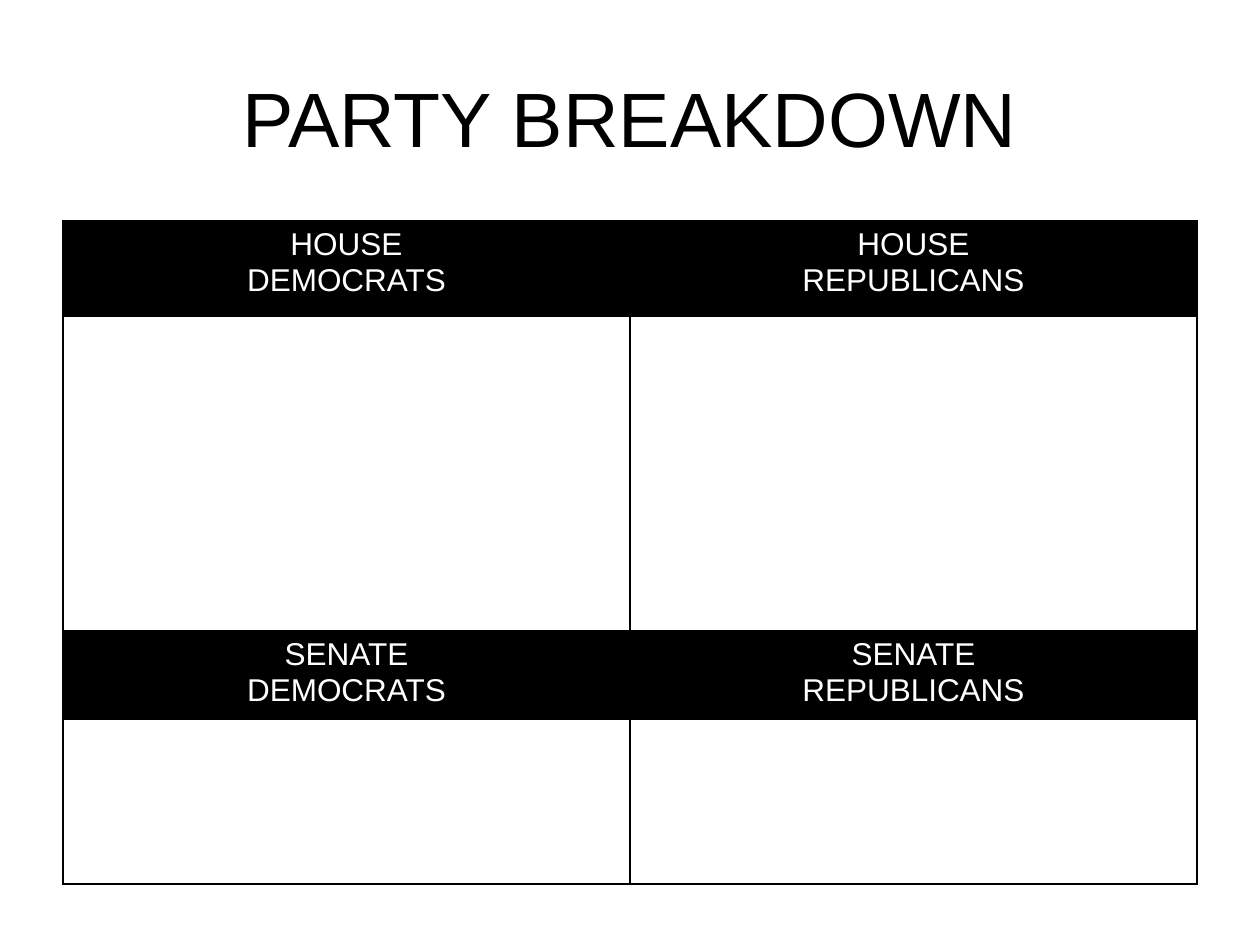
import lxml.etree
import pptx
import pptx.dml.color
import pptx.enum.text
import pptx.oxml.ns
import pptx.util

PX_PER_INCH = 126
FONT = "Arial"
COLORS = {"ink": "000000", "paper": "FFFFFF"}
ROW_HEIGHTS = [95, 315, 84, 165]
HEADINGS = {
    0: ["HOUSE\nDEMOCRATS", "HOUSE\nREPUBLICANS"],
    2: ["SENATE\nDEMOCRATS", "SENATE\nREPUBLICANS"],
}


def px(length):
    """Turn pixels into EMU."""
    return pptx.util.Emu(length * 914400 // PX_PER_INCH)


def color(name):
    """Look up a named colour."""
    return pptx.dml.color.RGBColor.from_string(COLORS[name])


def write_centred(text_frame, text, size, color_name):
    """Fill a text frame with centred paragraphs."""
    text_frame.text = text
    for paragraph in text_frame.paragraphs:
        paragraph.alignment = pptx.enum.text.PP_ALIGN.CENTER
        paragraph.font.name = FONT
        paragraph.font.size = pptx.util.Pt(size)
        paragraph.font.color.rgb = color(color_name)


def add_borders(cell):
    """Draw a thin line on all four sides of a cell."""
    properties = cell._tc.get_or_add_tcPr()
    for position, side in enumerate(("lnL", "lnR", "lnT", "lnB")):
        line = lxml.etree.Element(pptx.oxml.ns.qn(f"a:{side}"), w=str(pptx.util.Pt(1)))
        fill = lxml.etree.SubElement(line, pptx.oxml.ns.qn("a:solidFill"))
        lxml.etree.SubElement(fill, pptx.oxml.ns.qn("a:srgbClr"), val=COLORS["ink"])
        properties.insert(position, line)


def add_title(slide, left, top, width, height):
    """Place the slide title in the given box."""
    shape = slide.shapes.add_textbox(px(left), px(top), px(width), px(height))
    shape.text_frame.word_wrap = True
    shape.text_frame.vertical_anchor = pptx.enum.text.MSO_ANCHOR.MIDDLE
    write_centred(shape.text_frame, "PARTY BREAKDOWN", 44, "ink")


def add_party_table(slide, left, top, width):
    """Place the table of chambers and parties, with blank rows to fill in."""
    columns = len(HEADINGS[0])
    table = slide.shapes.add_table(
        len(ROW_HEIGHTS), columns, px(left), px(top), px(width), px(sum(ROW_HEIGHTS))
    ).table
    for column in table.columns:
        column.width = px(width // columns)
    for row_index, height in enumerate(ROW_HEIGHTS):
        table.rows[row_index].height = px(height)
        for column_index in range(columns):
            cell = table.cell(row_index, column_index)
            if row_index in HEADINGS:
                cell.fill.solid()
                cell.fill.fore_color.rgb = color("ink")
                write_centred(cell.text_frame, HEADINGS[row_index][column_index], 18, "paper")
            else:
                cell.fill.background()
            add_borders(cell)


def main():
    """Build and save the slide."""
    presentation = pptx.Presentation()
    presentation.slide_width = px(1260)
    presentation.slide_height = px(945)
    slide = presentation.slides.add_slide(presentation.slide_layouts[6])
    slide.background.fill.solid()
    slide.background.fill.fore_color.rgb = color("paper")
    add_title(slide, 63, 38, 1134, 157)
    add_party_table(slide, 63, 221, 1134)
    presentation.save("out.pptx")


if __name__ == "__main__":
    main()
